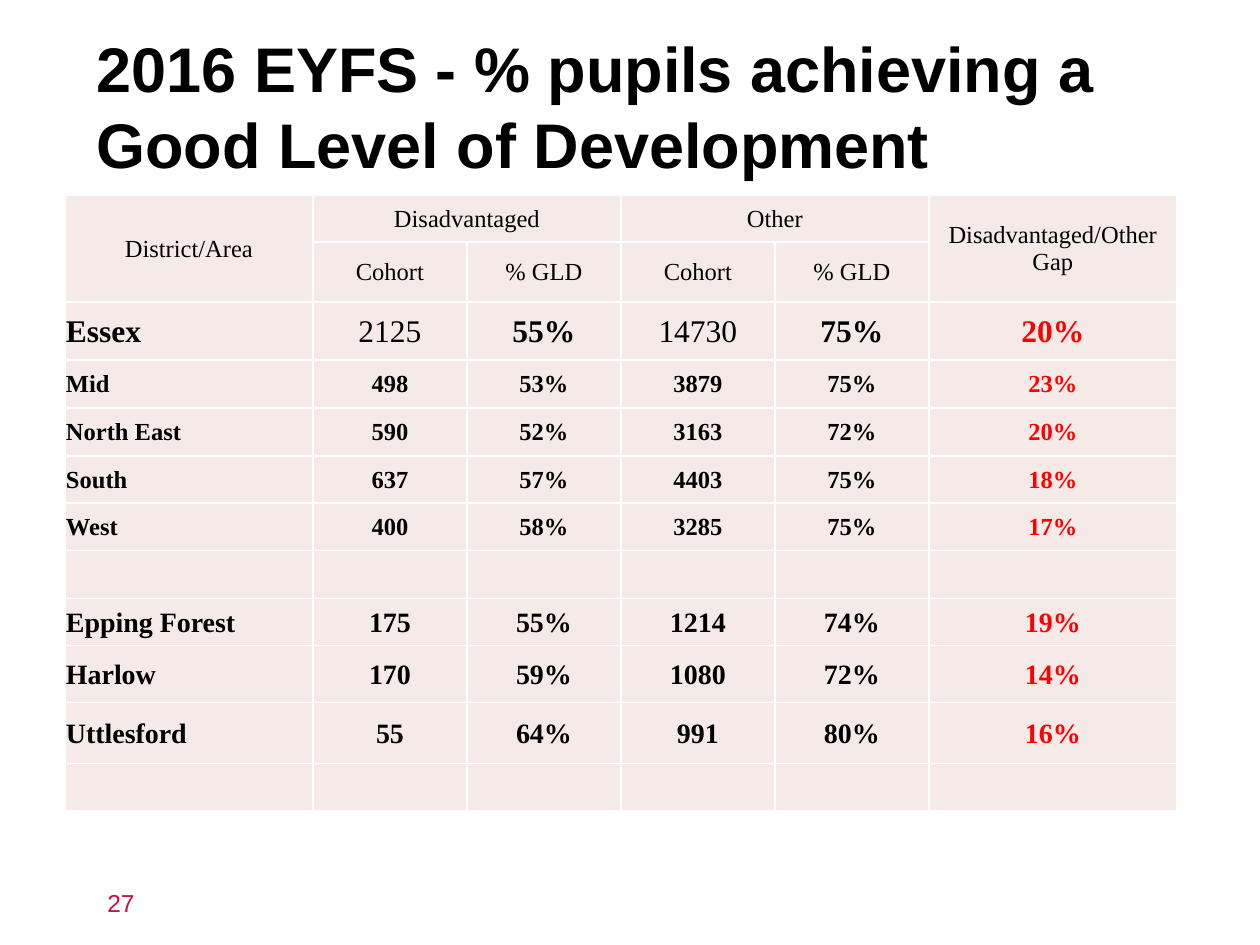
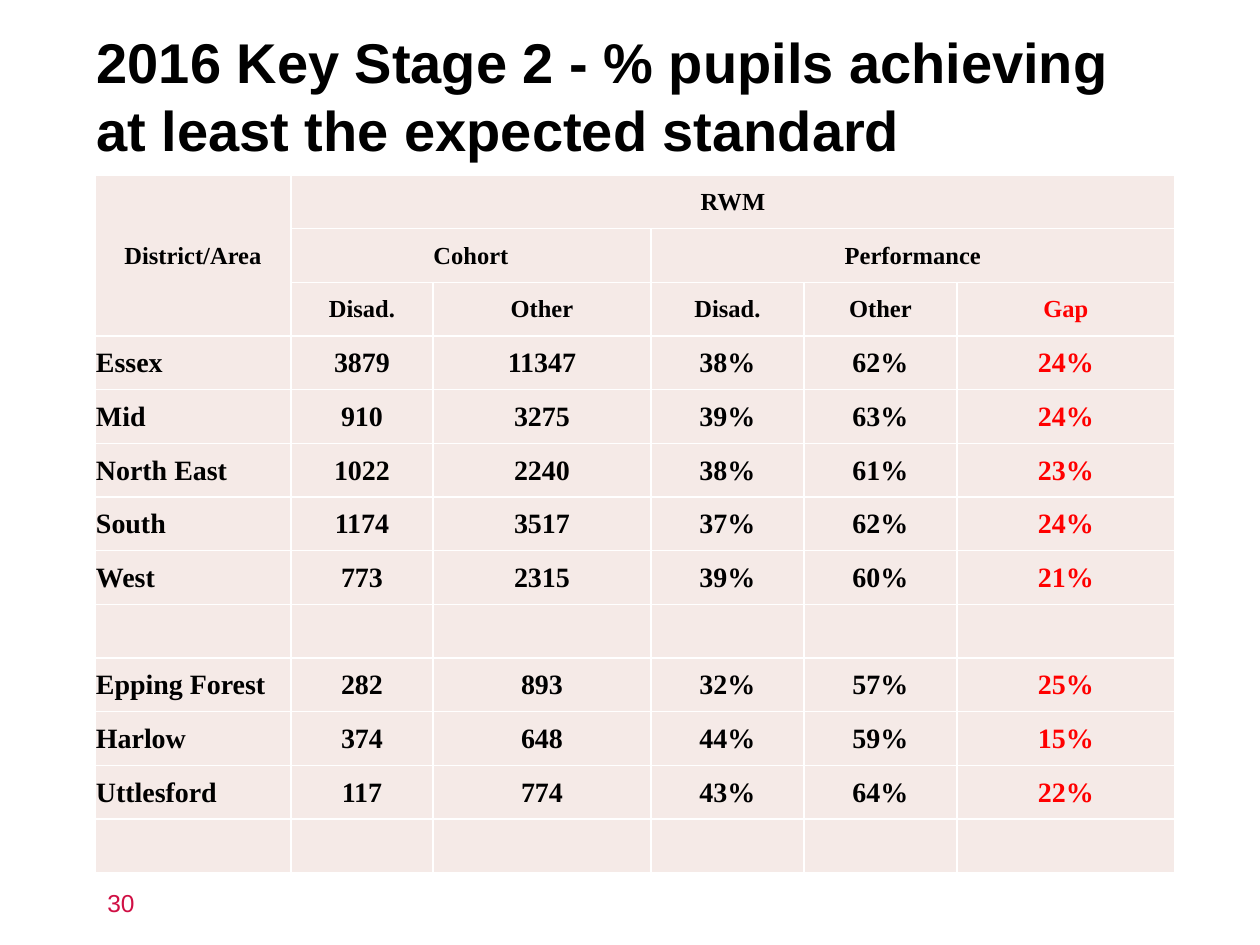
from lxml import etree
from pptx import Presentation
from pptx.dml.color import RGBColor
from pptx.enum.text import MSO_ANCHOR, MSO_AUTO_SIZE, PP_ALIGN
from pptx.oxml.ns import qn
from pptx.util import Emu, Pt

LEFT, CENTER = PP_ALIGN.LEFT, PP_ALIGN.CENTER
MIDDLE, NO_FIT = MSO_ANCHOR.MIDDLE, MSO_AUTO_SIZE.NONE
BLACK = RGBColor(0x00, 0x00, 0x00)
WHITE = RGBColor(0xFF, 0xFF, 0xFF)
RED = RGBColor(0xFF, 0x00, 0x00)
PINK = RGBColor(0xF5, 0xEA, 0xE7)
CRIMSON = RGBColor(0xD0, 0x0F, 0x44)
SANS, SERIF = "Arial", "Times New Roman"
TITLE_ONLY = 5
BLANK = [""] * 6
GAP_ROW = 2  # first row whose last column is red

EYFS = [
    ["District/Area", "Disadvantaged", "", "Other", "", "Disadvantaged/Other Gap"],
    ["", "Cohort", "% GLD", "Cohort", "% GLD", ""],
    ["Essex", "2125", "55%", "14730", "75%", "20%"],
    ["Mid", "498", "53%", "3879", "75%", "23%"],
    ["North East", "590", "52%", "3163", "72%", "20%"],
    ["South", "637", "57%", "4403", "75%", "18%"],
    ["West", "400", "58%", "3285", "75%", "17%"],
    BLANK,
    ["Epping Forest", "175", "55%", "1214", "74%", "19%"],
    ["Harlow", "170", "59%", "1080", "72%", "14%"],
    ["Uttlesford", "55", "64%", "991", "80%", "16%"],
    BLANK,
]
EYFS_SPANS = [(0, 0, 1, 0), (0, 1, 0, 2), (0, 3, 0, 4), (0, 5, 1, 5)]
EYFS_SIZES = [14] * 2 + [18] + [14] * 5 + [16] * 4
EYFS_ROWS = [47, 55, 58, 48, 48, 47, 48, 48, 47, 57, 61, 47]
EYFS_LIGHT = {(row, col) for row in (0, 1) for col in range(6)} | {(2, 1), (2, 3)}

STAGE = [
    ["District/Area", "RWM", "", "", "", ""],
    ["", "Cohort", "", "Performance", "", ""],
    ["", "Disad.", "Other", "Disad.", "Other", "Gap"],
    ["Essex", "3879", "11347", "38%", "62%", "24%"],
    ["Mid", "910", "3275", "39%", "63%", "24%"],
    ["North East", "1022", "2240", "38%", "61%", "23%"],
    ["South", "1174", "3517", "37%", "62%", "24%"],
    ["West", "773", "2315", "39%", "60%", "21%"],
    BLANK,
    ["Epping Forest", "282", "893", "32%", "57%", "25%"],
    ["Harlow", "374", "648", "44%", "59%", "15%"],
    ["Uttlesford", "117", "774", "43%", "64%", "22%"],
    BLANK,
]
STAGE_SPANS = [(0, 0, 2, 0), (0, 1, 0, 5), (1, 1, 1, 2), (1, 3, 1, 5)]
STAGE_SIZES = [14] * 3 + [16] * 10


def px(n):
    return Emu(round(n * 914400 / 126))


def add_run(para, text, face, size, color, bold=False):
    run = para.add_run()
    run.text = text
    font = run.font
    font.name, font.size, font.bold = face, Pt(size), bold
    font.color.rgb = color


def add_page(deck, title, size, height, number):
    """Add a slide with its title and page number."""
    slide = deck.slides.add_slide(deck.slide_layouts[TITLE_ONLY])
    head = slide.shapes.title
    head.left, head.top, head.width, head.height = map(px, (84, 16, 1081, height))
    frame = head.text_frame
    frame.word_wrap, frame.auto_size = True, NO_FIT
    frame.vertical_anchor = MIDDLE
    para = frame.paragraphs[0]
    para.alignment = LEFT
    add_run(para, title, SANS, size, BLACK, True)

    foot = slide.shapes.add_textbox(*map(px, (95, 882, 262, 42))).text_frame
    foot.word_wrap = True
    add_run(foot.paragraphs[0], number, SANS, 14, CRIMSON)
    return slide


def style_cell(cell):
    """Set white borders, pink fill and narrow margins."""
    props = cell._tc.get_or_add_tcPr()
    for side in ("a:lnL", "a:lnR", "a:lnT", "a:lnB"):
        line = etree.SubElement(props, qn(side), w=str(Pt(1)))
        fill = etree.SubElement(line, qn("a:solidFill"))
        etree.SubElement(fill, qn("a:srgbClr"), val=str(WHITE))
    cell.fill.solid()
    cell.fill.fore_color.rgb = PINK
    cell.margin_left = cell.margin_right = cell.margin_top = px(1)
    cell.margin_bottom = 0
    cell.vertical_anchor = MIDDLE


def add_grid(slide, data, box, widths, heads, spans, sizes, light=()):
    """Add a table; heads counts header rows, light lists cells not in bold."""
    frame = slide.shapes.add_table(len(data), len(widths), *map(px, box))
    table = frame.table
    table.first_row = table.horz_banding = False
    for column, width in zip(table.columns, widths):
        column.width = px(width)
    last = len(widths) - 1
    for row, texts in enumerate(data):
        for col, text in enumerate(texts):
            cell = table.cell(row, col)
            style_cell(cell)
            para = cell.text_frame.paragraphs[0]
            para.alignment = LEFT if col == 0 and row >= heads else CENTER
            if text:
                color = RED if col == last and row >= GAP_ROW else BLACK
                add_run(para, text, SERIF, sizes[row], color, (row, col) not in light)
            else:
                para.font.size = Pt(sizes[row])
    for top, left, low, right in spans:
        table.cell(top, left).merge(table.cell(low, right))
    return table


def main():
    deck = Presentation()
    deck.slide_width, deck.slide_height = px(1260), px(945)

    slide = add_page(deck, "2016 EYFS - % pupils achieving a Good Level of Development",
                     36, 178, "27")
    table = add_grid(slide, EYFS, (65, 195, 1112, sum(EYFS_ROWS)),
                     [248] + [154] * 4 + [248], 2, EYFS_SPANS, EYFS_SIZES, EYFS_LIGHT)
    for row, height in zip(table.rows, EYFS_ROWS):
        row.height = px(height)

    slide = add_page(deck, "2016 Key Stage 2 - % pupils achieving at least the expected standard",
                     32, 158, "30")
    add_grid(slide, STAGE, (95, 175, 1080, 698), [196, 142, 218, 153, 153, 218],
             3, STAGE_SPANS, STAGE_SIZES)

    deck.save("out.pptx")


if __name__ == "__main__":
    main()
